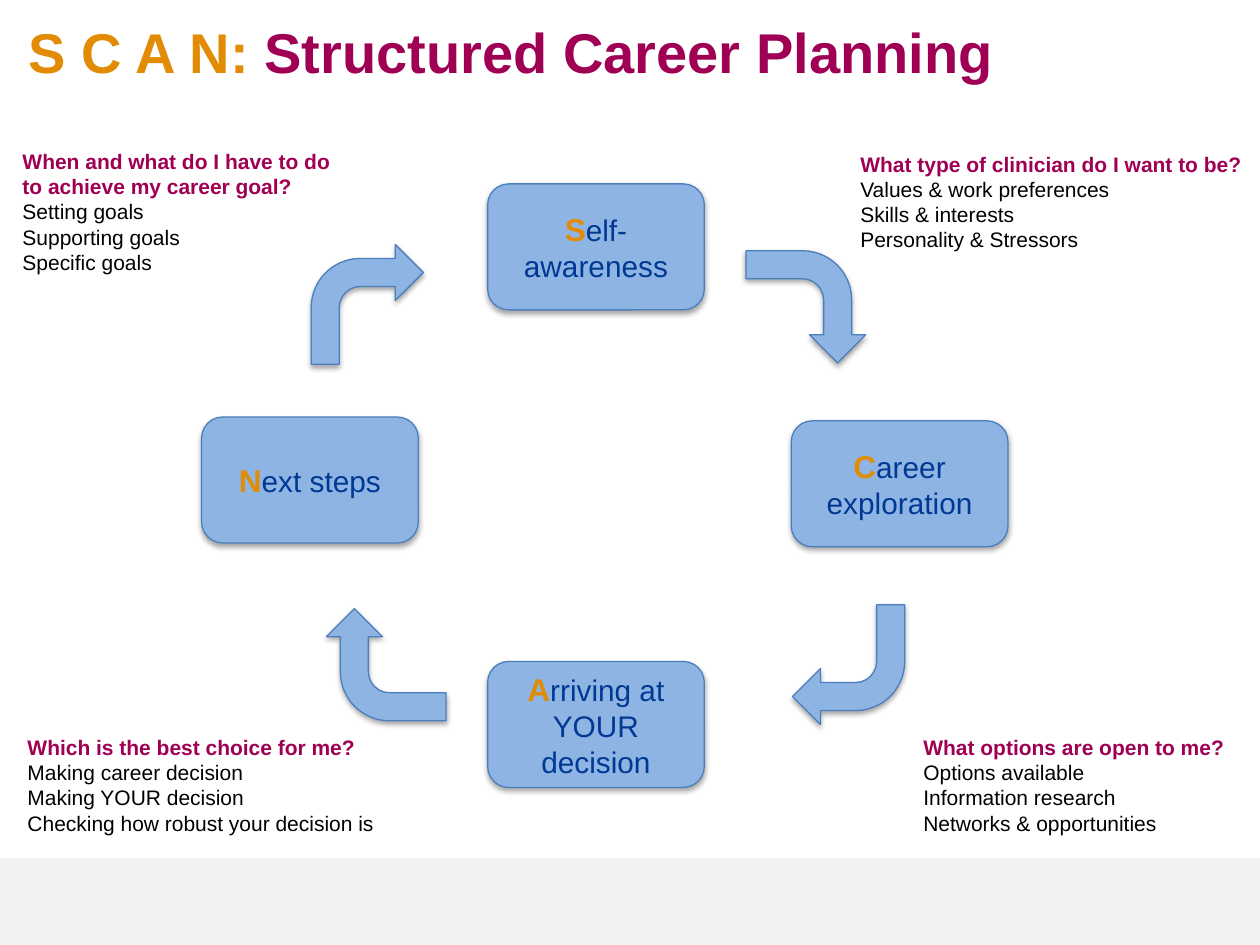
import pptx
import pptx.dml.color
import pptx.enum.shapes
import pptx.enum.text
import pptx.oxml
import pptx.util

Inches = pptx.util.Inches
Pt = pptx.util.Pt
RGBColor = pptx.dml.color.RGBColor
SHAPE = pptx.enum.shapes.MSO_SHAPE
ALIGN = pptx.enum.text.PP_ALIGN
ANCHOR = pptx.enum.text.MSO_ANCHOR
FIT = pptx.enum.text.MSO_AUTO_SIZE

ORANGE = RGBColor(0xE2, 0x8C, 0x05)
PLUM = RGBColor(0xA0, 0x00, 0x54)
NAVY = RGBColor(0x00, 0x38, 0x93)
BLACK = RGBColor(0x00, 0x00, 0x00)
SKY = RGBColor(0x8E, 0xB4, 0xE3)
EDGE = RGBColor(0x4B, 0x7E, 0xBC)
GREY = RGBColor(0xF2, 0xF2, 0xF2)

SHADOW = (
    '<a:effectLst xmlns:a="http://schemas.openxmlformats.org/drawingml/2006/main">'
    '<a:outerShdw blurRad="39370" dist="22860" dir="5400000" rotWithShape="0">'
    '<a:srgbClr val="000000"><a:alpha val="35000"/></a:srgbClr>'
    '</a:outerShdw></a:effectLst>'
)

# left, top, initial, rest of the label
STEPS = [
    (3.87, 1.46, "S", "elf- awareness"),
    (6.28, 3.34, "C", "areer exploration"),
    (1.6, 3.31, "N", "ext steps"),
    (3.87, 5.25, "A", "rriving at YOUR decision"),
]
# left, top, rotation
ARROWS = [(2.47, 1.94, 0), (2.62, 4.8, 270), (5.95, 1.96, 90), (6.29, 4.8, 180)]
# left, top, width, height, heading lines, detail lines
NOTES = [
    (6.73, 1.15, 3.27, 0.91, ["What type of clinician do I want to be?"],
     ["Values & work preferences", "Skills & interests", "Personality & Stressors"]),
    (7.23, 5.78, 2.62, 0.91, ["What options are open to me?"],
     ["Options available", "Information research", "Networks & opportunities"]),
    (0.12, 5.78, 2.97, 0.91, ["Which is the best choice for me?"],
     ["Making career decision", "Making YOUR decision",
      "Checking how robust your decision is"]),
    (0.08, 1.13, 2.68, 1.11,
     ["When and what do I have to do", "to achieve my career goal?"],
     ["Setting goals", "Supporting goals", "Specific goals"]),
]


def style(run, size, color, bold):
    font = run.font
    font.name = "Arial"
    font.size = Pt(size)
    font.bold = bold
    font.color.rgb = color


def add_title(slide):
    title = slide.shapes.title
    title.left, title.top = Inches(0.13), Inches(0.09)
    title.width, title.height = Inches(8.54), Inches(0.64)
    frame = title.text_frame
    frame.vertical_anchor = ANCHOR.TOP
    frame.auto_size = FIT.SHAPE_TO_FIT_TEXT
    para = frame.paragraphs[0]
    para.text = "S C A N: "
    para.alignment = ALIGN.LEFT
    para.add_run().text = "Structured Career Planning"
    for run, color in zip(para.runs, (ORANGE, PLUM)):
        style(run, 32, color, True)


def add_band(slide):
    band = slide.shapes.add_shape(
        SHAPE.RECTANGLE, 0, Inches(6.81), Inches(10), Inches(0.69))
    band.shadow.inherit = False
    band.fill.solid()
    band.fill.fore_color.rgb = GREY
    band.line.fill.background()


def add_blue(slide, kind, left, top, width, height):
    """Add a blue shape with a thin edge and a soft shadow below it."""
    shape = slide.shapes.add_shape(
        kind, Inches(left), Inches(top), Inches(width), Inches(height))
    shape.fill.solid()
    shape.fill.fore_color.rgb = SKY
    shape.line.color.rgb = EDGE
    shape.line.width = Pt(0.75)
    shape._element.spPr.append(pptx.oxml.parse_xml(SHADOW))
    return shape


def add_step(slide, left, top, first, rest):
    box = add_blue(slide, SHAPE.ROUNDED_RECTANGLE, left, top, 1.72, 1)
    frame = box.text_frame
    frame.word_wrap = True
    frame.vertical_anchor = ANCHOR.MIDDLE
    para = frame.paragraphs[0]
    para.text = first
    para.alignment = ALIGN.CENTER
    para.add_run().text = rest
    style(para.runs[0], 18, ORANGE, True)
    style(para.runs[1], 17, NAVY, False)


def add_arrow(slide, left, top, turn):
    arrow = add_blue(slide, SHAPE.BENT_ARROW, left, top, 0.89, 0.95)
    arrow.rotation = turn


def add_note(slide, left, top, width, height, heads, items):
    box = slide.shapes.add_textbox(
        Inches(left), Inches(top), Inches(width), Inches(height))
    frame = box.text_frame
    frame.text = "\n".join(heads + items)
    frame.word_wrap = False
    frame.auto_size = FIT.SHAPE_TO_FIT_TEXT
    for row, para in enumerate(frame.paragraphs):
        head = row < len(heads)
        style(para.runs[0], 12, PLUM if head else BLACK, head)


def main():
    deck = pptx.Presentation()
    deck.slide_width, deck.slide_height = Inches(10), Inches(7.5)
    slide = deck.slides.add_slide(deck.slide_layouts[5])
    add_band(slide)
    add_title(slide)
    for step in STEPS:
        add_step(slide, *step)
    for arrow in ARROWS:
        add_arrow(slide, *arrow)
    for note in NOTES:
        add_note(slide, *note)
    deck.save("out.pptx")


if __name__ == "__main__":
    main()
